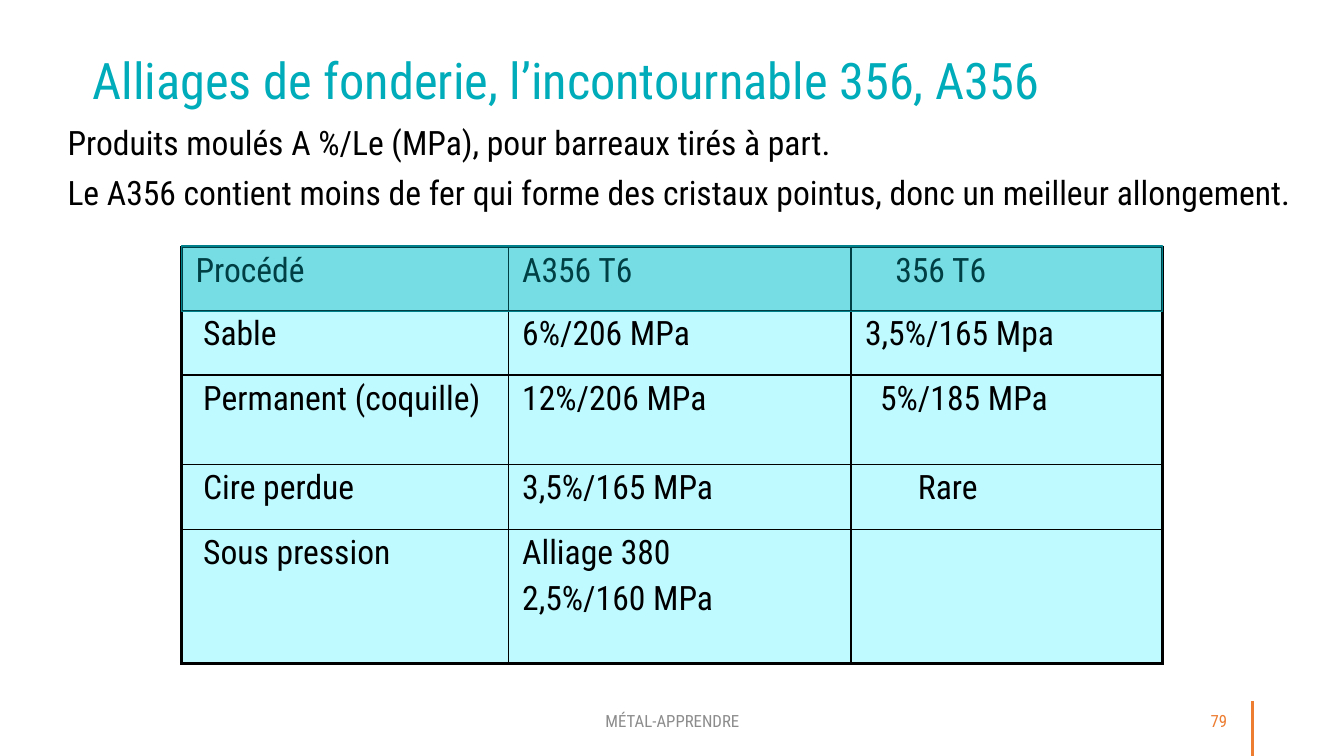
import pptx
import pptx.chart.data
import pptx.dml.color
import pptx.enum.shapes
import pptx.enum.text
import pptx.oxml
import pptx.oxml.ns
import pptx.util

WIDTH, HEIGHT = 13.33, 7.5
FONT = "Roboto Condensed"
COLORS = {"title": "00ACB9", "text": "000000", "cell": "BEFAFF", "band": "00ADBA",
          "band_line": "00808A", "accent": "ED7D31", "footer": "8C8C8C"}
COLUMNS = [3.24, 3.4, 3.09]
ROWS = [0.63, 0.64, 0.89, 0.64, 1.33]
THIN, THICK = 1, 2.25
SPACE = 0.075
CELLS = [
    [(["Procédé"], 0), (["A356 T6"], 0), (["356 T6"], 4)],
    [(["Sable"], 1), (["6%/206 MPa"], 0), (["3,5%/165 Mpa"], 0)],
    [(["Permanent (coquille)"], 1), (["12%/206 MPa"], 0), (["5%/185 MPa"], 2)],
    [(["Cire perdue"], 1), (["3,5%/165 MPa"], 0), (["Rare"], 7)],
    [(["Sous pression"], 1), (["Alliage 380", "2,5%/160 MPa"], 0), ([], 0)],
]
BODY = ["Produits moulés A %/Le (MPa), pour barreaux tirés à part.",
        "Le A356 contient moins de fer qui forme des cristaux pointus, "
        "donc un meilleur allongement."]
ALIGN = pptx.enum.text.PP_ALIGN
ANCHOR = pptx.enum.text.MSO_ANCHOR


def inches(values):
    """Convert lengths to slide units."""
    return [pptx.util.Inches(value) for value in values]


def color(name):
    """Look up a named colour."""
    return pptx.dml.color.RGBColor.from_string(COLORS[name])


def set_values(target, values):
    """Set attributes from a dict of format values."""
    for name, value in values.items():
        setattr(target, name, value)


def write(frame, lines, size, ink, gap=0, **layout):
    """Write lines as paragraphs, with a gap before all but the first."""
    for index, line in enumerate(lines):
        para = frame.paragraphs[0] if index == 0 else frame.add_paragraph()
        set_values(para, layout)
        if index:
            para.space_before = pptx.util.Pt(gap)
        span = para.add_run()
        span.text = line
        set_values(span.font, {"name": FONT, "size": pptx.util.Pt(size)})
        span.font.color.rgb = color(ink)


def add_text(page, box, lines, size, ink, inset=(0, 0), anchor=ANCHOR.TOP, **layout):
    """Place a wrapped text box."""
    frame = page.shapes.add_textbox(*inches(box)).text_frame
    across, down = inches(inset)
    set_values(frame, {"word_wrap": True, "vertical_anchor": anchor,
                       "margin_left": across, "margin_right": across,
                       "margin_top": down, "margin_bottom": down})
    write(frame, lines, size, ink, **layout)


def add_borders(cell, widths):
    """Draw the left, right, top and bottom borders of a cell."""
    properties = cell._tc.get_or_add_tcPr()
    for index, (side, width) in enumerate(zip("LRTB", widths)):
        properties.insert(index, pptx.oxml.parse_xml(
            f'<a:ln{side} {pptx.oxml.ns.nsdecls("a")} w="{pptx.util.Pt(width)}">'
            f'<a:solidFill><a:srgbClr val="{COLORS["text"]}"/></a:solidFill></a:ln{side}>'))


def add_alloy_table(page, box):
    """Place the table of casting processes and alloys."""
    table = page.shapes.add_table(len(ROWS), len(COLUMNS), *inches(box)).table
    for column, width in zip(table.columns, COLUMNS):
        column.width = pptx.util.Inches(width)
    for row, height in zip(table.rows, ROWS):
        row.height = pptx.util.Inches(height)
    last_row, last_column = len(ROWS) - 1, len(COLUMNS) - 1
    for r, row in enumerate(CELLS):
        for c, (lines, spaces) in enumerate(row):
            cell = table.cell(r, c)
            left, side, edge = inches([0.14 + spaces * SPACE, 0.14, 0.04])
            set_values(cell, {"margin_left": left, "margin_right": side,
                              "margin_top": edge, "margin_bottom": edge})
            cell.fill.solid()
            cell.fill.fore_color.rgb = color("cell")
            outer = [c == 0, c == last_column, r == 0, r == last_row]
            add_borders(cell, [THICK if edge_side else THIN for edge_side in outer])
            write(cell.text_frame, lines, 24, "text", gap=4.8)


def add_header_band(page, box):
    """Lay a translucent band over the table header."""
    band = page.shapes.add_shape(pptx.enum.shapes.MSO_SHAPE.RECTANGLE, *inches(box))
    band.shadow.inherit = False
    band.fill.solid()
    band.fill.fore_color.rgb = color("band")
    tint = band.fill._xPr.find(".//" + pptx.oxml.ns.qn("a:srgbClr"))
    tint.append(pptx.oxml.parse_xml(
        f'<a:alpha {pptx.oxml.ns.nsdecls("a")} val="37000"/>'))
    band.line.color.rgb = color("band_line")
    band.line.width = pptx.util.Pt(THIN)


def add_footer(page, box):
    """Place the footer name, page number and accent line."""
    left, top, width, height = box
    middle = {"inset": (0.1, 0.05), "anchor": ANCHOR.MIDDLE}
    add_text(page, (left + 4.42, top, 4.5, 0.4), ["MÉTAL-APPRENDRE"], 12, "footer",
             alignment=ALIGN.CENTER, **middle)
    add_text(page, (left + 10.95, top, 1.32, 0.4), ["79"], 12, "accent",
             alignment=ALIGN.RIGHT, **middle)
    x = left + width - 0.91
    line = page.shapes.add_connector(pptx.enum.shapes.MSO_CONNECTOR.STRAIGHT,
                                     *inches((x, top + height, x, top)))
    line.line.color.rgb = color("accent")
    line.line.width = pptx.util.Pt(THICK)
    line._element.spPr.append(pptx.oxml.parse_xml(
        f'<a:effectLst {pptx.oxml.ns.nsdecls("a")}/>'))


def build_slide(page):
    """Compose the casting alloys slide."""
    left, top, width = 1.8, 2.45, sum(COLUMNS)
    add_alloy_table(page, (left, top, width, sum(ROWS)))
    add_text(page, (0.92, 0.56, 10.74, 0.6),
             ["Alliages de fonderie, l’incontournable 356, A356"], 36, "title",
             line_spacing=0.9)
    add_text(page, (0.67, 1.25, WIDTH - 0.67, 1), BODY, 24, "text", gap=10,
             line_spacing=0.9)
    add_header_band(page, (left, top - 0.01, width, 0.65))
    add_footer(page, (0, 6.95, WIDTH, HEIGHT - 6.95))


def main():
    """Build and save the deck."""
    deck = pptx.Presentation()
    deck.slide_width, deck.slide_height = inches((WIDTH, HEIGHT))
    build_slide(deck.slides.add_slide(deck.slide_layouts[6]))
    deck.save("out.pptx")


if __name__ == "__main__":
    main()
